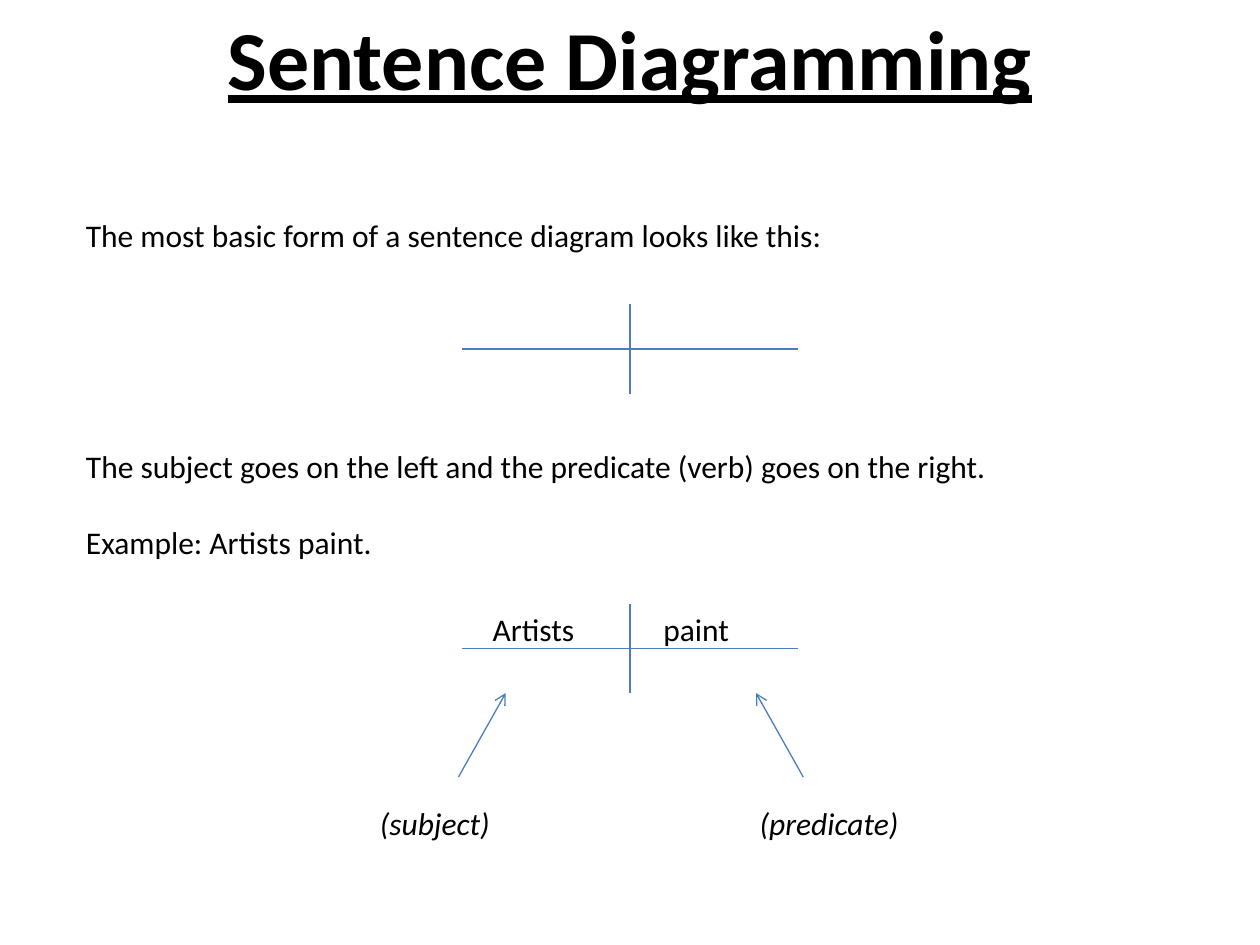
from dataclasses import dataclass

import lxml.etree
import pptx
import pptx.dml.color
import pptx.enum.shapes
import pptx.enum.text
import pptx.oxml.ns
import pptx.slide
import pptx.util

Pt = pptx.util.Pt
COLORS = {"text": "000000", "line": "4B7EBC"}
FONT = "Calibri"
BODY_SIZE = 18
BLANK_LINE = 22  # height of one body line, left open between paragraphs


@dataclass
class Label:
    lines: list[str]
    left: float
    top: float
    width: float
    height: float = 29
    size: float = BODY_SIZE
    bold: bool = False
    italic: bool = False
    underline: bool = False
    centered: bool = False


@dataclass
class Line:
    start: tuple[float, float]
    end: tuple[float, float]
    arrow: bool = False


def color(name: str) -> pptx.dml.color.RGBColor:
    return pptx.dml.color.RGBColor.from_string(COLORS[name])


def draw_label(page: pptx.slide.Slide, label: Label) -> None:
    box = page.shapes.add_textbox(
        Pt(label.left), Pt(label.top), Pt(label.width), Pt(label.height))
    frame = box.text_frame
    frame.word_wrap = False
    frame.auto_size = pptx.enum.text.MSO_AUTO_SIZE.SHAPE_TO_FIT_TEXT
    frame.text = "\n".join(label.lines)
    for index, para in enumerate(frame.paragraphs):
        if index:
            para.space_before = Pt(BLANK_LINE)
        if label.centered:
            para.alignment = pptx.enum.text.PP_ALIGN.CENTER
        para.font.name = FONT
        para.font.size = Pt(label.size)
        para.font.bold = label.bold
        para.font.italic = label.italic
        para.font.underline = label.underline
        para.font.color.rgb = color("text")


def draw_line(page: pptx.slide.Slide, line: Line) -> None:
    connector = page.shapes.add_connector(
        pptx.enum.shapes.MSO_CONNECTOR.STRAIGHT,
        *(Pt(value) for value in line.start + line.end))
    connector.line.color.rgb = color("line")
    connector.line.width = Pt(0.75)
    if line.arrow:
        lxml.etree.SubElement(
            connector.line._get_or_add_ln(), pptx.oxml.ns.qn("a:tailEnd"), type="arrow")
    lxml.etree.SubElement(
        connector._element.spPr, pptx.oxml.ns.qn("a:effectLst"))


def draw_diagram(page: pptx.slide.Slide, middle: float) -> None:
    """Draw the baseline and the bar that parts subject from predicate."""
    center, half_width, half_height = 360, 96, 25.5
    draw_line(page, Line((center - half_width, middle), (center + half_width, middle)))
    draw_line(page, Line((center, middle - half_height), (center, middle + half_height)))


LABELS = [
    # Title
    Label(["Sentence Diagramming"], 121, 0, 478, 65.5, size=48,
          bold=True, underline=True, centered=True),
    # Explanation
    Label(["The most basic form of a sentence diagram looks like this:"], 42, 120, 440),
    Label(["The subject goes on the left and the predicate (verb) goes on the right.",
           "Example: Artists paint."], 42, 252, 536, 73),
    # Words on the example diagram
    Label(["Artists"], 274.5, 345, 61),
    Label(["paint"], 372, 345, 52.5),
    # Names of the sentence parts
    Label(["(subject)"], 210, 456, 79, italic=True),
    Label(["(predicate)"], 427, 456, 95, italic=True),
]
ARROWS = [
    Line((262, 444), (289, 396), arrow=True),
    Line((459, 444), (432, 396), arrow=True),
]


def main() -> None:
    deck = pptx.Presentation()
    deck.slide_width, deck.slide_height = Pt(720), Pt(540)
    page = deck.slides.add_slide(deck.slide_layouts[6])

    # Empty diagram, then the example
    for middle in (199.5, 370.5):
        draw_diagram(page, middle)
    for label in LABELS:
        draw_label(page, label)
    for arrow in ARROWS:
        draw_line(page, arrow)

    deck.save("out.pptx")


if __name__ == "__main__":
    main()
